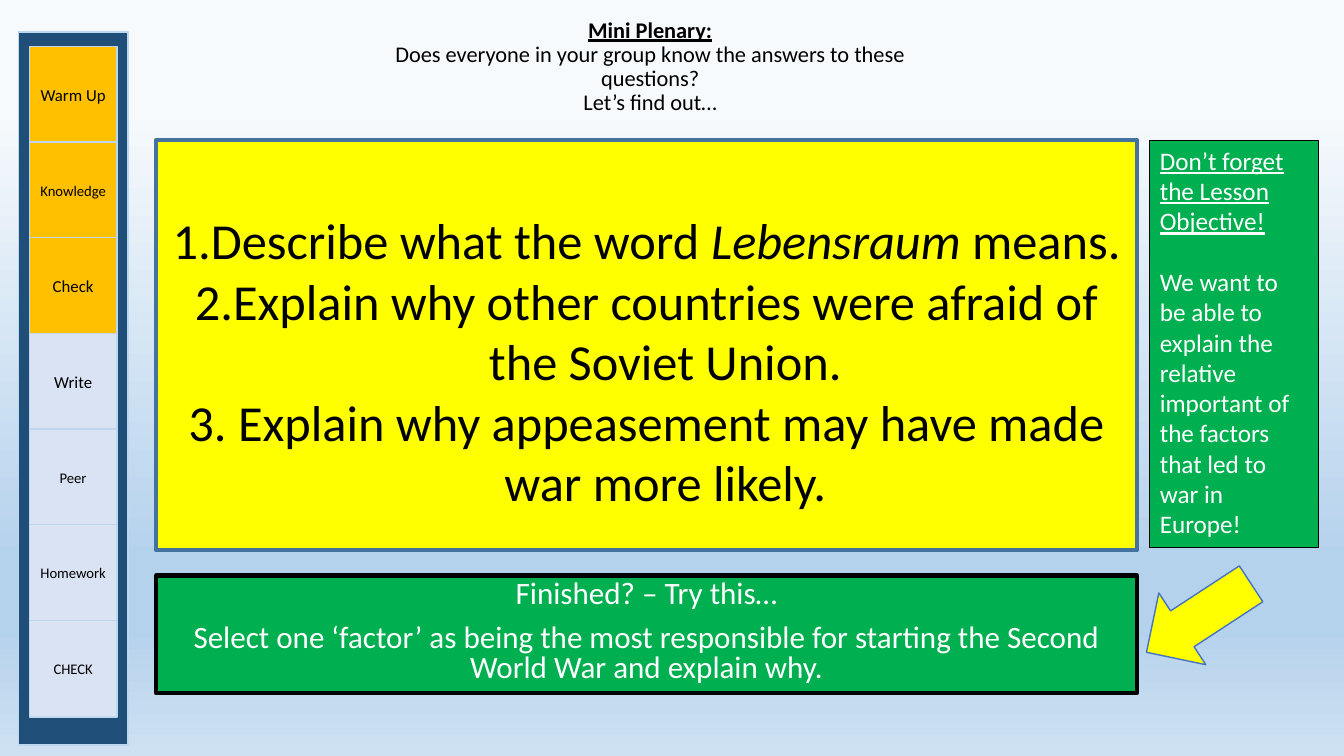
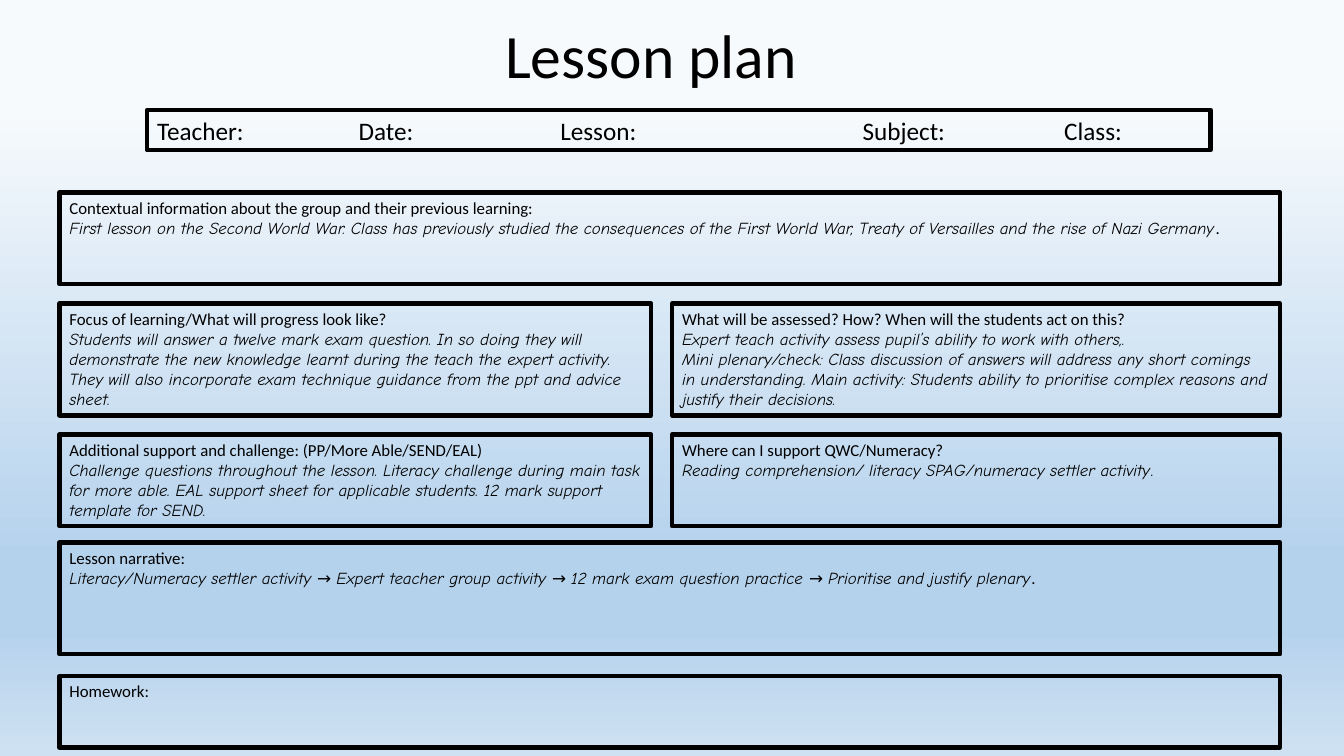
import copy
import pptx
import pptx.dml.color
import pptx.enum.shapes
import pptx.enum.text
import pptx.oxml
import pptx.oxml.ns
import pptx.util

Cm, Pt = pptx.util.Cm, pptx.util.Pt
RGB = pptx.dml.color.RGBColor
SHAPE = pptx.enum.shapes.MSO_SHAPE
ALIGN = pptx.enum.text.PP_ALIGN
ANCHOR = pptx.enum.text.MSO_ANCHOR
qn = pptx.oxml.ns.qn

BLACK = RGB(0x00, 0x00, 0x00)
WHITE = RGB(0xFF, 0xFF, 0xFF)
NAVY = RGB(0x1F, 0x4E, 0x79)
SKY = RGB(0xBD, 0xD7, 0xEE)
GREEN = RGB(0x00, 0xB0, 0x50)
YELLOW = RGB(0xFF, 0xFF, 0x00)
STEEL = RGB(0x43, 0x73, 0x9E)
BLUE = RGB(0x44, 0x72, 0xC4)
AMBER = RGB(0xFF, 0xC0, 0x00)
PALE = RGB(0xDA, 0xE3, 0xF3)
STOPS = [
    (14, RGB(0xF7, 0xFA, 0xFD)),
    (74, RGB(0xB5, 0xD2, 0xEC)),
    (83, RGB(0xB5, 0xD2, 0xEC)),
    (100, RGB(0xCE, 0xE1, 0xF2)),
]

PLAIN = {}
HEAD = {"bold": True, "underline": True}
LINED = {"underline": True}
SLANT = {"italic": True}
NOTE = {"name": "Comic Neue", "italic": True}
UPRIGHT = {"name": "Comic Neue"}

INTRO = [[
    ("Mini Plenary:\n", HEAD),
    ("Does everyone in your group know the answers to these questions?\nLet’s find out…", PLAIN),
]]
TASK = [
    [("Finished? – Try this…", PLAIN)],
    [("Select one ‘factor’ as being the most responsible for starting the Second World War and explain why.", PLAIN)],
]
ASKS = [
    [("Describe what the word ", PLAIN), ("Lebensraum", SLANT), (" means.", PLAIN)],
    [("Explain why other countries were afraid of the Soviet Union.", PLAIN)],
    [(" Explain why appeasement may have made war more likely.", PLAIN)],
]
GOAL = [
    [("Don’t forget the Lesson Objective!", LINED)],
    [("We want to be able to explain the relative important of the factors that led to war in Europe!", PLAIN)],
]
STEPS = [
    ("Warm Up", 12), ("Knowledge", 10.5), ("Check", 12), ("Write", 12),
    ("Peer", 10.5), ("Homework", 10.5), ("CHECK", 10.5),
]
DONE = 3

FIELDS = ["Teacher:", "Date:", "Lesson:", "Subject:", "Class:"]
TABS = [5.08, 10.16, 17.78, 22.86]
LEFT, RIGHT, END = 1.5, 16.94, 32.26
HALF = 14.91
ROWS = [
    (4.85, 2.31, [
        ("Contextual information about the group and their previous learning:", [
            [("First lesson on the Second World War. Class has previously studied the consequences of the First World War, Treaty of Versailles and the rise of Nazi Germany", NOTE),
             (".", PLAIN)]]),
    ]),
    (7.65, 2.82, [
        ("Focus of learning/What will progress look like?", [
            [("Students will answer a twelve mark exam question. In so doing they will demonstrate the new knowledge learnt during the teach the expert activity. They will also incorporate exam technique guidance from the ppt and advice sheet.", NOTE)]]),
        ("What will be assessed? How? When will the students act on this?", [
            [("Expert teach activity assess pupil’s ability to work with others,.", NOTE)],
            [("Mini plenary/check: Class discussion of answers will address any short comings in understanding. Main activity: Students ability to prioritise complex reasons and justify their decisions.", NOTE)]]),
    ]),
    (10.95, 2.31, [
        ("Additional support and challenge: (PP/More Able/SEND/EAL)", [
            [("Challenge questions throughout the lesson. Literacy challenge during main task for more able. EAL support sheet for applicable students. 12 mark support template for SEND.", NOTE)]]),
        ("Where can I support QWC/Numeracy?", [
            [("Reading comprehension/ literacy SPAG/numeracy settler activity", NOTE),
             (".", UPRIGHT)]]),
    ]),
    (13.67, 2.82, [
        ("Lesson narrative:", [
            [("Literacy/Numeracy settler activity → Expert teacher group activity → 12 mark exam question practice → Prioritise and justify plenary", NOTE),
             (".", PLAIN)]]),
    ]),
    (17.04, 1.8, [("Homework:", [])]),
]


def style(font, looks):
    for key, value in looks.items():
        setattr(font, key, value)


def fill_line(para, runs):
    for text, looks in runs:
        for n, part in enumerate(text.split("\n")):
            if n:
                para.add_line_break()
            if part:
                run = para.add_run()
                run.text = part
                if len(runs) > 1:
                    style(run.font, looks)


def write(shape, paras, size, ink=BLACK, align=ALIGN.LEFT, anchor=ANCHOR.TOP,
          gap=0, lead=None, marks=None):
    frame = shape.text_frame
    frame.word_wrap = True
    frame.auto_size = pptx.enum.text.MSO_AUTO_SIZE.NONE
    frame.vertical_anchor = anchor
    for n, runs in enumerate(paras):
        para = frame.add_paragraph() if n else frame.paragraphs[0]
        para.alignment = align
        para.space_before = Pt(gap if n else 0)
        if lead:
            para.line_spacing = lead
        if marks:
            marks(para._p.get_or_add_pPr())
        para.font.name = "Calibri"
        para.font.size = Pt(size)
        para.font.color.rgb = ink
        if len(runs) == 1:
            style(para.font, runs[0][1])
        fill_line(para, runs)


def number(props):
    props.set("marL", str(Cm(0.95)))
    props.set("indent", str(-Cm(0.95)))
    mark = pptx.oxml.parse_xml(
        '<a:buAutoNum xmlns:a="http://schemas.openxmlformats.org/drawingml/2006/main" type="arabicPeriod"/>')
    props.append(mark)


def add_tabs(props):
    stops = props.makeelement(qn("a:tabLst"), {})
    for pos in TABS:
        stops.append(stops.makeelement(qn("a:tab"), {"pos": str(Cm(pos)), "algn": "l"}))
    props.append(stops)


def place(shape, box):
    shape.left, shape.top, shape.width, shape.height = map(Cm, box)


def paint(shape, fill, edge, width):
    if fill is None:
        shape.fill.background()
    else:
        shape.fill.solid()
        shape.fill.fore_color.rgb = fill
    shape.line.color.rgb = edge
    shape.line.width = Pt(width)


def draw(slide, box, fill=None, edge=BLACK, width=3, kind=SHAPE.RECTANGLE):
    shape = slide.shapes.add_shape(kind, *map(Cm, box))
    shape.shadow.inherit = False
    paint(shape, fill, edge, width)
    return shape


def add_title(slide, box, paras, size):
    title = slide.shapes.title
    place(title, box)
    write(title, paras, size, align=ALIGN.CENTER, anchor=ANCHOR.BOTTOM, lead=0.9)


def set_back(master):
    fill = master.background.fill
    fill.gradient()
    fill.gradient_angle = 270
    stops = fill.gradient_stops
    group = stops[0]._gs.getparent()
    for _ in range(len(STOPS) - len(stops)):
        group.append(copy.deepcopy(group[0]))
    for stop, (spot, color) in zip(fill.gradient_stops, STOPS):
        stop.color.rgb = color
        stop.position = spot / 100


def build_quiz(deck):
    slide = deck.slides.add_slide(deck.slide_layouts[0])
    draw(slide, (0.46, 0.81, 2.77, 17.96), NAVY, SKY, 1)
    add_title(slide, (8.79, 0.3, 15.19, 2.74), INTRO, 16)
    task = slide.placeholders[1]
    place(task, (3.94, 14.5, 24.71, 2.97))
    paint(task, GREEN, BLACK, 3)
    write(task, TASK, 22.2, WHITE, ALIGN.CENTER, gap=10, lead=0.8)
    asks = draw(slide, (3.94, 3.53, 24.71, 10.34), YELLOW, STEEL)
    write(asks, ASKS, 36, align=ALIGN.CENTER, anchor=ANCHOR.MIDDLE, marks=number)
    asks.text_frame.margin_top = Cm(0.89)
    for n, (name, size) in enumerate(STEPS):
        step = draw(slide, (0.74, 1.17 + 2.41 * n, 2.21, 2.44),
                    AMBER if n < DONE else PALE, SKY, 1)
        write(step, [[(name, PLAIN)]], size, align=ALIGN.CENTER, anchor=ANCHOR.MIDDLE)
    goal = draw(slide, (28.98, 3.53, 4.24, 10.26), GREEN, BLACK, 0.75)
    write(goal, GOAL, 18, WHITE, gap=22)
    arrow = draw(slide, (29.13, 14, 2.16, 3.15), YELLOW, BLUE, 1, SHAPE.DOWN_ARROW)
    arrow.rotation = 56.8


def build_plan(deck):
    slide = deck.slides.add_slide(deck.slide_layouts[5])
    add_title(slide, (3.71, 0.69, 25.4, 1.75), [[("Lesson plan", PLAIN)]], 44)
    bar = draw(slide, (3.71, 2.77, 26.8, 1.02))
    write(bar, [[("\t".join(FIELDS), PLAIN)]], 18, marks=add_tabs)
    for top, high, cards in ROWS:
        if len(cards) == 1:
            spans = [(LEFT, END - LEFT)]
        else:
            spans = [(LEFT, HALF), (RIGHT, END - RIGHT)]
        for (left, wide), (head, notes) in zip(spans, cards):
            card = draw(slide, (left, top, wide, high))
            write(card, [[(head, PLAIN)]] + notes, 12)


def main():
    deck = pptx.Presentation()
    deck.slide_width, deck.slide_height = Cm(33.87), Cm(19.05)
    set_back(deck.slide_master)
    build_quiz(deck)
    build_plan(deck)
    deck.save("out.pptx")


if __name__ == "__main__":
    main()
